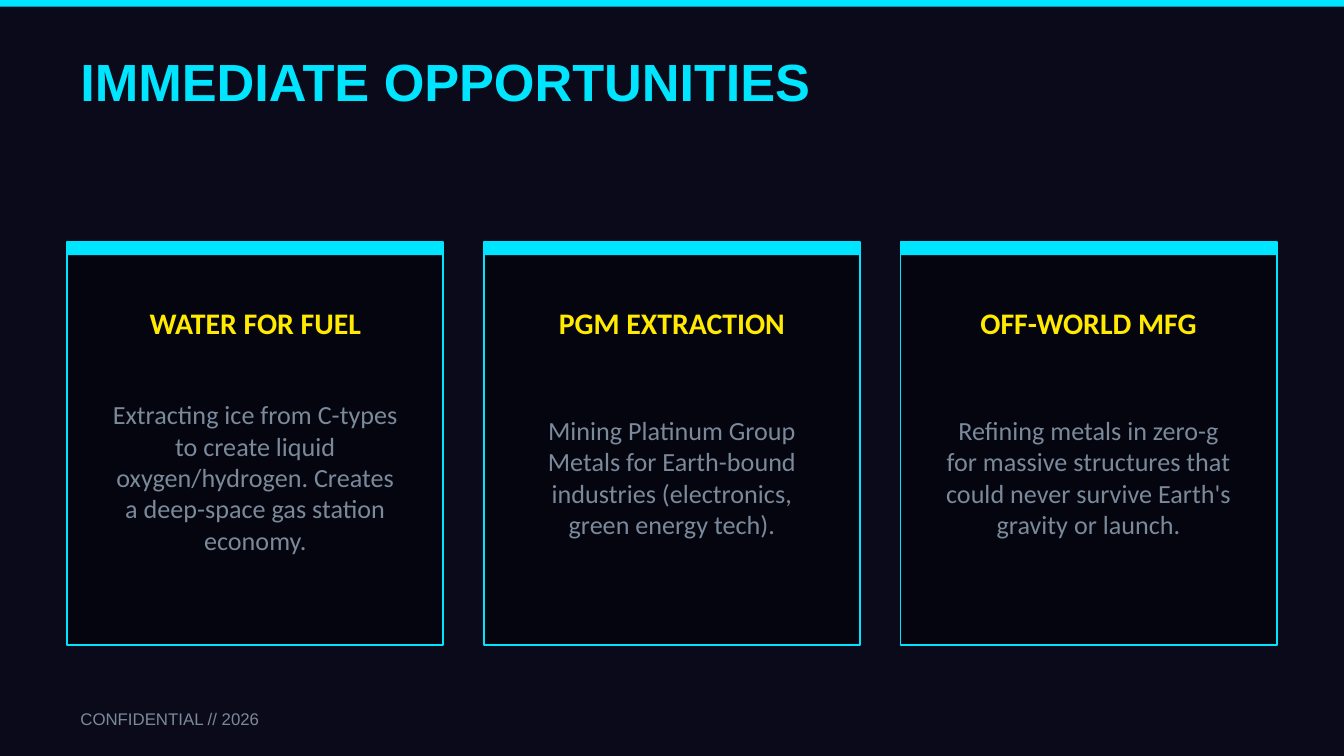
from pptx import Presentation
from pptx.dml.color import RGBColor
from pptx.enum.shapes import MSO_SHAPE as Shape
from pptx.enum.text import MSO_ANCHOR as Anchor, PP_ALIGN as Align
from pptx.util import Pt

TITLE = "IMMEDIATE OPPORTUNITIES"
FOOTER = "CONFIDENTIAL // 2026"
OPPORTUNITIES = [
    ("WATER FOR FUEL",
     "Extracting ice from C-types to create liquid oxygen/hydrogen. "
     "Creates a deep-space gas station economy."),
    ("PGM EXTRACTION",
     "Mining Platinum Group Metals for Earth-bound industries "
     "(electronics, green energy tech)."),
    ("OFF-WORLD MFG",
     "Refining metals in zero-g for massive structures that could never "
     "survive Earth's gravity or launch."),
]

NIGHT, PANEL = "0A0A1A", "050510"
CYAN, YELLOW, GREY = "00E5FF", "FFEA00", "7A8A9A"

PX = 914400 // 200
SLIDE_W, SLIDE_H = 2000, 1125
MARGIN, CARD_TOP, CARD_W, CARD_H = 100, 360, 560, 600
GAP = (SLIDE_W - 2 * MARGIN - len(OPPORTUNITIES) * CARD_W) // (len(OPPORTUNITIES) - 1)
HEADING_INSET, BODY_INSET = 20, 40


def color(value):
    return RGBColor.from_string(value)


def add_rect(slide, left, top, width, height, fill, outline=None):
    rect = slide.shapes.add_shape(
        Shape.RECTANGLE, left * PX, top * PX, width * PX, height * PX)
    rect.shadow.inherit = False
    rect.fill.solid()
    rect.fill.fore_color.rgb = color(fill)
    if outline:
        rect.line.color.rgb = color(outline)
        rect.line.width = Pt(1)
    else:
        rect.line.fill.background()


def add_text(slide, left, top, width, height, text, size, font, ink,
             bold=False, align=Align.LEFT):
    frame = slide.shapes.add_textbox(
        left * PX, top * PX, width * PX, height * PX).text_frame
    frame.word_wrap = True
    frame.vertical_anchor = Anchor.MIDDLE
    paragraph = frame.paragraphs[0]
    paragraph.alignment = align
    run = paragraph.add_run()
    run.text = text
    run.font.size = Pt(size)
    run.font.name = font
    run.font.bold = bold
    run.font.color.rgb = color(ink)


def add_card(slide, left, heading, body):
    add_rect(slide, left, CARD_TOP, CARD_W, CARD_H, PANEL, CYAN)
    add_rect(slide, left, CARD_TOP, CARD_W, 20, CYAN)
    add_text(slide, left + HEADING_INSET, CARD_TOP + 80, CARD_W - 2 * HEADING_INSET, 80,
             heading, 16, "Calibri", YELLOW, True, Align.CENTER)
    add_text(slide, left + BODY_INSET, CARD_TOP + 200, CARD_W - 2 * BODY_INSET, 300,
             body, 14, "Calibri", GREY, align=Align.CENTER)


def main():
    deck = Presentation()
    deck.slide_width, deck.slide_height = SLIDE_W * PX, SLIDE_H * PX
    slide = deck.slides.add_slide(deck.slide_layouts[6])
    slide.background.fill.solid()
    slide.background.fill.fore_color.rgb = color(NIGHT)

    add_rect(slide, 0, 0, SLIDE_W, 10, CYAN)
    add_text(slide, MARGIN, 60, SLIDE_W - 2 * MARGIN, 120, TITLE, 28, "Arial", CYAN, True)
    for column, (heading, body) in enumerate(OPPORTUNITIES):
        add_card(slide, MARGIN + column * (CARD_W + GAP), heading, body)
    add_text(slide, MARGIN, 1040, 1000, 60, FOOTER, 9, "Arial", GREY)

    deck.save("out.pptx")


if __name__ == "__main__":
    main()
